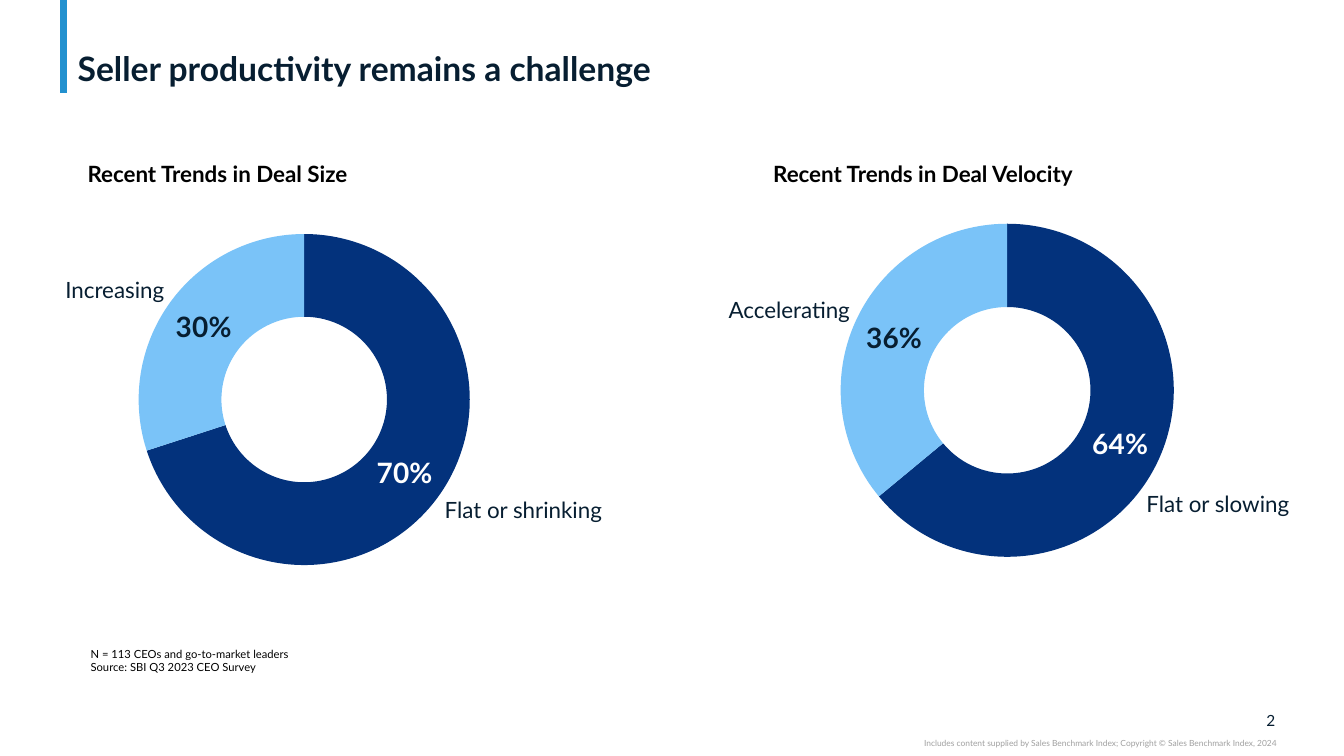
from dataclasses import dataclass

from lxml import etree
from pptx import Presentation
from pptx import util as u
from pptx.chart.data import CategoryChartData
from pptx.dml.color import RGBColor
from pptx.enum import chart as ch, text
from pptx.oxml.ns import qn


@dataclass(frozen=True)
class Theme:
    font: str = "Lato"
    chart_font: str = "Arial"
    ink: str = "071E31"
    black: str = "000000"
    white: str = "FFFFFF"
    grey: str = "A0A0A0"
    accent: str = "2391CF"
    navy: str = "03327C"
    sky: str = "7AC3F8"
    title: int = 24
    value: int = 20
    heading: int = 16
    number: int = 11
    chart: int = 10
    note: int = 8
    legal: int = 6


class Deck:
    def __init__(self, theme):
        self.theme = theme
        self.prs = Presentation()
        self.prs.slide_width, self.prs.slide_height = u.Inches(13.33), u.Inches(7.5)
        self.slide = self.prs.slides.add_slide(self.prs.slide_layouts[5])

    def style(self, font, size, color, bold=False, name=None):
        font.name, font.size, font.bold = name or self.theme.font, u.Pt(size), bold
        font.color.rgb = RGBColor.from_string(color)

    def title(self, words, box):
        sp = self.slide.shapes.title
        sp.left, sp.top, sp.width, sp.height = map(u.Inches, box)
        tf = sp.text_frame
        tf.text, tf.word_wrap = words, True
        tf.auto_size = text.MSO_AUTO_SIZE.NONE
        tf.vertical_anchor = text.MSO_ANCHOR.BOTTOM
        tf.margin_left = tf.margin_right = u.Inches(0.1)
        tf.margin_top = tf.margin_bottom = 0
        p = tf.paragraphs[0]
        p.alignment, p.line_spacing = text.PP_ALIGN.LEFT, 0.9
        self.style(p.font, self.theme.title, self.theme.ink, True)

    def text(self, lines, box, size, color, bold=False, right=False,
             inset=True, middle=False, wrap=True):
        tf = self.slide.shapes.add_textbox(*map(u.Inches, box)).text_frame
        tf.word_wrap = wrap
        if not inset:
            tf.margin_left = tf.margin_right = tf.margin_top = tf.margin_bottom = 0
        if middle:
            tf.vertical_anchor = text.MSO_ANCHOR.MIDDLE
        tf.text = "\n".join(lines)
        for p in tf.paragraphs:
            p.alignment = text.PP_ALIGN.RIGHT if right else text.PP_ALIGN.LEFT
            self.style(p.font, size, color, bold)

    def line(self, x1, y1, x2, y2, color, width):
        ln = self.slide.shapes.add_connector(1, *map(u.Inches, (x1, y1, x2, y2)))
        ln.line.color.rgb = RGBColor.from_string(color)
        ln.line.width = u.Pt(width)
        etree.SubElement(ln._element.spPr, qn("a:effectLst"))

    def doughnut(self, values, box, plot_area):
        t = self.theme
        data = CategoryChartData(number_format='0"%"')
        data.categories = ["1", "2"]
        data.add_series("Series 1", values)
        chart = self.slide.shapes.add_chart(
            ch.XL_CHART_TYPE.DOUGHNUT, *map(u.Inches, box), data).chart
        chart.has_legend = chart.has_title = False
        self.style(chart.font, t.chart, t.ink, name=t.chart_font)
        plot = chart.plots[0]
        plot.vary_by_categories = False
        plot.has_data_labels = True
        plot.data_labels.show_value = True
        plot.data_labels.show_percentage = False
        for i, (fill, ink) in enumerate([(t.navy, t.white), (t.sky, t.ink)]):
            point = plot.series[0].points[i]
            point.format.fill.solid()
            point.format.fill.fore_color.rgb = RGBColor.from_string(fill)
            point.format.line.fill.background()
            self.style(point.data_label.font, t.value, ink, True)
        self.place_plot(chart, plot_area)

    def place_plot(self, chart, fractions):
        area = chart._chartSpace.find(".//" + qn("c:plotArea"))
        for old in area.findall(qn("c:layout")):
            area.remove(old)
        layout = etree.Element(qn("c:layout"))
        area.insert(0, layout)
        manual = etree.SubElement(layout, qn("c:manualLayout"))
        settings = [("layoutTarget", "inner"), ("xMode", "edge"), ("yMode", "edge")]
        settings += zip("xywh", fractions)
        for tag, val in settings:
            etree.SubElement(manual, qn("c:" + tag)).set("val", str(val))


def main():
    t = Theme()
    deck = Deck(t)

    # Accent bar, page number and legal line
    deck.line(0.63, 0, 0.63, 0.92, t.accent, 5)
    deck.text(["2"], (12.32, 7.05, 0.33, 0.19), t.number, t.ink,
              right=True, inset=False, middle=True)
    deck.text(["Includes content supplied by Sales Benchmark Index; "
               "Copyright © Sales Benchmark Index, 2024"],
              (7.5, 7.32, 5.16, 0.1), t.legal, t.grey, right=True, inset=False)

    # Title and survey note
    deck.title("Seller productivity remains a challenge", (0.67, 0.04, 11.99, 0.84))
    deck.text(["N = 113 CEOs and go-to-market leaders", "Source: SBI Q3 2023 CEO Survey"],
              (0.8, 6.37, 4.09, 0.37), t.note, t.black)

    # Two panels: heading, doughnut and the names of its slices
    panels = [
        ("Recent Trends in Deal Size", (0.77, 1.54, 4.41, 0.37),
         (70, 30), (1, 1.76, 4.04, 4.41), (0.093, 0.127, 0.813, 0.746),
         "Flat or shrinking", (4.41, 4.92, 1.62, 0.27),
         "Increasing", (0.59, 2.74, 1.04, 0.27)),
        ("Recent Trends in Deal Velocity", (7.57, 1.54, 5, 0.37),
         (64, 36), (7.97, 1.66, 4.04, 4.43), (0.091, 0.126, 0.818, 0.747),
         "Flat or slowing", (11.37, 4.86, 1.48, 0.27),
         "Accelerating", (7.15, 2.94, 1.28, 0.27)),
    ]
    for heading, head_box, values, box, plot, flat, flat_box, up, up_box in panels:
        deck.text([heading], head_box, t.heading, t.black, bold=True)
        deck.doughnut(values, box, plot)
        for name, name_box, right in [(flat, flat_box, False), (up, up_box, True)]:
            deck.text([name], name_box, t.heading, t.ink, right=right,
                      inset=False, middle=True, wrap=False)

    deck.prs.save("out.pptx")


if __name__ == "__main__":
    main()
